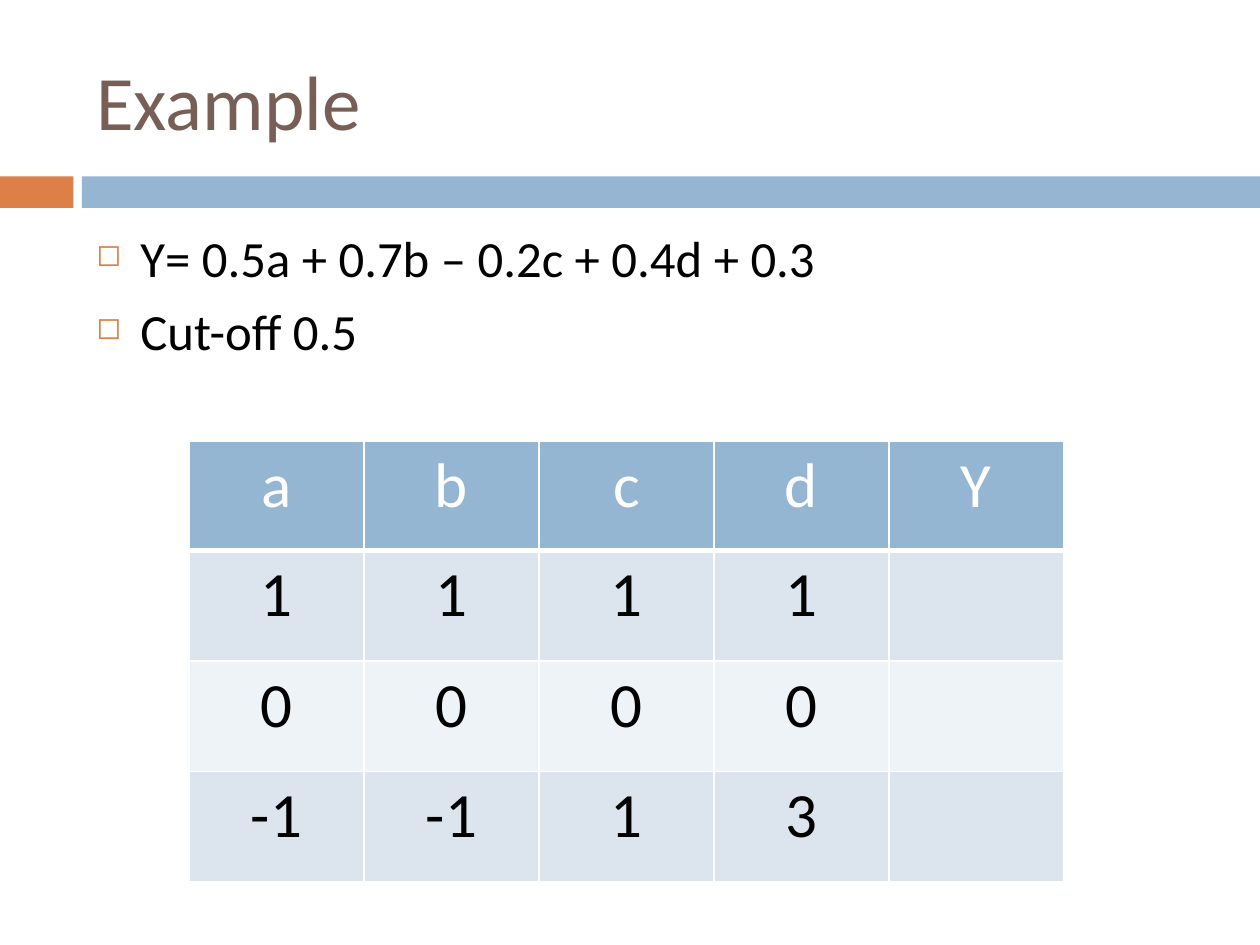
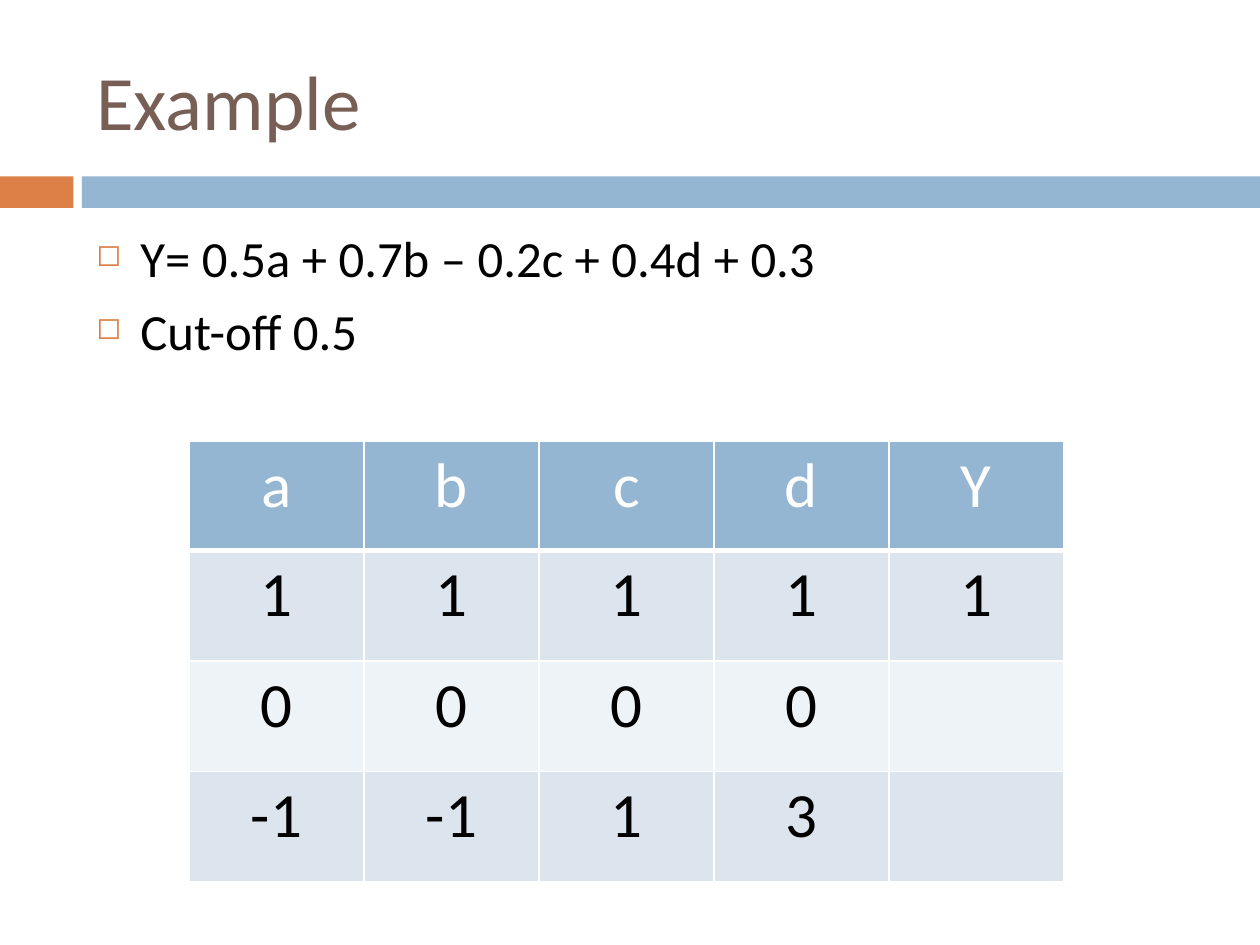
from dataclasses import dataclass

import lxml.etree
import pptx
import pptx.dml.color
import pptx.enum.shapes
import pptx.enum.text
import pptx.oxml.ns
import pptx.util

Pt = pptx.util.Pt
qn = pptx.oxml.ns.qn

# Shared style
FONT = "Calibri"
ORANGE, BLUE, BROWN = "DD8047", "94B6D2", "775F55"
WHITE, BLACK = "FFFFFF", "000000"
BAND_FILLS = ("DCE5EE", "EEF3F7")
INDENT = 25.2


@dataclass(frozen=True)
class Box:
    left: float
    top: float
    width: float
    height: float

    def lengths(self) -> tuple:
        return Pt(self.left), Pt(self.top), Pt(self.width), Pt(self.height)


@dataclass(frozen=True)
class Bar:
    box: Box
    color: str


@dataclass(frozen=True)
class Example:
    body_height: float
    answers: tuple[str, ...]


BARS = (
    Bar(Box(0, 100.8, 42, 18), ORANGE),
    Bar(Box(46.8, 100.8, 673.2, 18), BLUE),
)
TITLE_BOX = Box(48, 18, 642, 78)
BULLETS = ("Y= 0.5a + 0.7b – 0.2c + 0.4d + 0.3", "Cut-off 0.5")

# Table content and grid
HEADER = ("a", "b", "c", "d", "Y")
INPUTS = (("1", "1", "1", "1"), ("0", "0", "0", "0"), ("-1", "-1", "1", "3"))
TABLE_BOX = Box(108, 252, 500, 252)
HEADER_HEIGHT = 62.64

EXAMPLES = (
    Example(96, ("", "", "")),
    Example(90, ("1", "", "")),
)


def rgb(color: str) -> pptx.dml.color.RGBColor:
    return pptx.dml.color.RGBColor.from_string(color)


def add_text(p, text: str, *, size: float, color: str = BLACK,
             align=None, before: float = 0) -> None:
    p.alignment = align
    p.space_before = Pt(before)
    r = p.add_run()
    r.text = text
    r.font.name, r.font.size, r.font.bold = FONT, Pt(size), False
    r.font.color.rgb = rgb(color)


def add_bullet(p) -> None:
    pPr = p._p.get_or_add_pPr()
    pPr.set("marL", str(Pt(INDENT)))
    pPr.set("indent", str(-Pt(INDENT)))
    buClr = lxml.etree.SubElement(pPr, qn("a:buClr"))
    lxml.etree.SubElement(buClr, qn("a:srgbClr"), val=ORANGE)
    lxml.etree.SubElement(pPr, qn("a:buSzPct"), val="60000")
    lxml.etree.SubElement(pPr, qn("a:buChar"), char="◻")


def add_bar(s, bar: Bar) -> None:
    sp = s.shapes.add_shape(pptx.enum.shapes.MSO_SHAPE.RECTANGLE, *bar.box.lengths())
    sp.shadow.inherit = False
    sp.fill.solid()
    sp.fill.fore_color.rgb = rgb(bar.color)
    sp.line.fill.background()


def add_frame(s, box: Box, anchor):
    tf = s.shapes.add_textbox(*box.lengths()).text_frame
    tf.word_wrap = True
    tf.vertical_anchor = anchor
    return tf


def set_borders(cell, **widths: float) -> None:
    tcPr = cell._tc.get_or_add_tcPr()
    for side, width in widths.items():
        ln = lxml.etree.SubElement(tcPr, qn(f"a:ln{side}"), w=str(Pt(width)))
        fill = lxml.etree.SubElement(ln, qn("a:solidFill"))
        lxml.etree.SubElement(fill, qn("a:srgbClr"), val=WHITE)


def add_table(s, answers: tuple[str, ...]) -> None:
    rows = [HEADER] + [(*row, y) for row, y in zip(INPUTS, answers)]
    table = s.shapes.add_table(len(rows), len(HEADER), *TABLE_BOX.lengths()).table
    body_height = (TABLE_BOX.height - HEADER_HEIGHT) / len(INPUTS)
    for i, row in enumerate(rows):
        table.rows[i].height = Pt(body_height if i else HEADER_HEIGHT)
        for j, text in enumerate(row):
            cell = table.cell(i, j)
            set_borders(cell, L=1, R=1, T=3 if i == 1 else 1, B=1 if i else 3)
            cell.fill.solid()
            cell.fill.fore_color.rgb = rgb(BAND_FILLS[(i - 1) % 2] if i else BLUE)
            if text:
                add_text(cell.text_frame.paragraphs[0], text, size=36,
                         color=BLACK if i else WHITE,
                         align=pptx.enum.text.PP_ALIGN.CENTER)


def add_example(prs, example: Example) -> None:
    s = prs.slides.add_slide(prs.slide_layouts[6])
    for bar in BARS:
        add_bar(s, bar)

    # Title
    tf = add_frame(s, TITLE_BOX, pptx.enum.text.MSO_ANCHOR.MIDDLE)
    add_text(tf.paragraphs[0], "Example", size=44, color=BROWN)

    # Formula and cut-off
    tf = add_frame(s, Box(48, 126, 642, example.body_height),
                   pptx.enum.text.MSO_ANCHOR.TOP)
    for i, text in enumerate(BULLETS):
        p = tf.add_paragraph() if i else tf.paragraphs[0]
        add_text(p, text, size=29, before=7)
        add_bullet(p)

    add_table(s, example.answers)


def main() -> None:
    prs = pptx.Presentation()
    prs.slide_width, prs.slide_height = Pt(720), Pt(540)
    for example in EXAMPLES:
        add_example(prs, example)
    prs.save("out.pptx")


if __name__ == "__main__":
    main()
